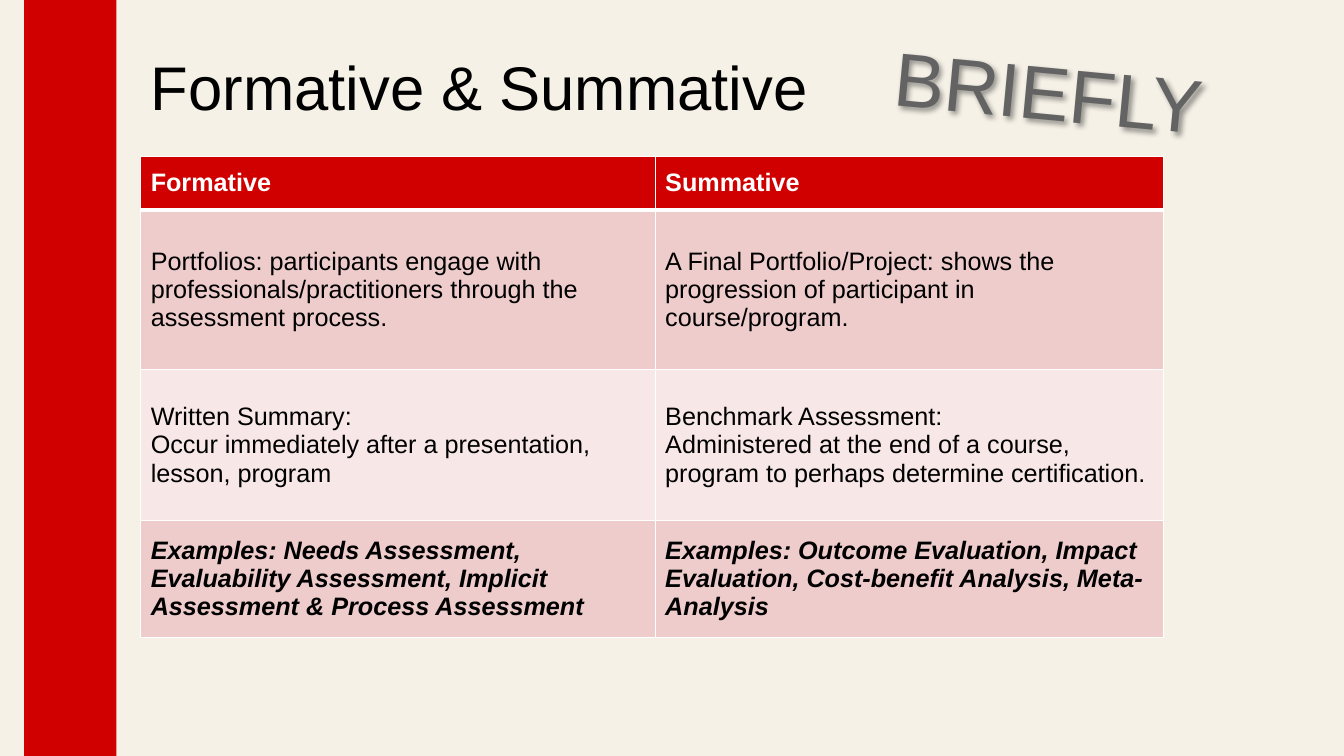
from lxml import etree
from pptx import Presentation
from pptx.dml.color import RGBColor
from pptx.enum.shapes import MSO_SHAPE
from pptx.enum.text import MSO_ANCHOR, PP_ALIGN
from pptx.oxml import parse_xml
from pptx.oxml.ns import nsdecls
from pptx.util import Pt

EMU_PER_PX = 9525
RECTANGLE = MSO_SHAPE.RECTANGLE
MIDDLE = MSO_ANCHOR.MIDDLE
LEFT, CENTER = PP_ALIGN.LEFT, PP_ALIGN.CENTER
TITLE_ONLY = 5

FONT = "Arial"
CREAM, RED, WHITE, BLACK, GRAY = "F5F1E7", "D00000", "FFFFFF", "000000", "626362"
ROW_FILLS = [RED, "EECCCC", "F7E7E7", "EECCCC"]
COLUMN_WIDTHS = [490, 484]
ROW_HEIGHTS = [51, 152, 144, 111]
ROWS = [
    ("Formative", "Summative"),
    ("Portfolios: participants engage with professionals/practitioners "
     "through the assessment process.",
     "A Final Portfolio/Project: shows the progression of participant in course/program."),
    ("Written Summary:\nOccur immediately after a presentation, lesson, program",
     "Benchmark Assessment:\nAdministered at the end of a course, program to perhaps "
     "determine certification."),
    ("Examples: Needs Assessment, Evaluability Assessment, Implicit Assessment "
     "& Process Assessment",
     "Examples: Outcome Evaluation, Impact Evaluation, Cost-benefit Analysis, Meta-Analysis"),
]


def px(length):
    return length * EMU_PER_PX


def color(hex_string):
    return RGBColor.from_string(hex_string)


def format_text(text_frame, size, text_color, bold=False, italic=False, alignment=LEFT):
    for paragraph in text_frame.paragraphs:
        paragraph.alignment = alignment
        for run in paragraph.runs:
            font = run.font
            font.name, font.size = FONT, Pt(size)
            font.bold, font.italic = bold, italic
            font.color.rgb = color(text_color)


def add_background(slide, left, top, width, height):
    slide.background.fill.solid()
    slide.background.fill.fore_color.rgb = color(CREAM)
    band = slide.shapes.add_shape(RECTANGLE, px(left), px(top), px(width), px(height))
    band.shadow.inherit = False
    band.fill.solid()
    band.fill.fore_color.rgb = color(RED)
    band.line.fill.background()


def add_title(slide, left, top, width, height):
    title = slide.shapes.title
    title.left, title.top, title.width, title.height = map(px, (left, top, width, height))
    text_frame = title.text_frame
    text_frame.text = "Formative & Summative"
    text_frame.vertical_anchor = MIDDLE
    text_frame.paragraphs[0].line_spacing = 0.9
    format_text(text_frame, 44, BLACK)


def set_border(cell, side, points):
    properties = cell._tc.get_or_add_tcPr()
    line = etree.SubElement(properties, properties.tag.replace("tcPr", f"ln{side}"),
                            w=str(Pt(points)))
    line.append(parse_xml(f'<a:solidFill {nsdecls("a")}><a:srgbClr val="{WHITE}"/></a:solidFill>'))


def add_comparison_table(slide, left, top):
    frame = slide.shapes.add_table(len(ROWS), len(COLUMN_WIDTHS), px(left), px(top),
                                   px(sum(COLUMN_WIDTHS)), px(sum(ROW_HEIGHTS)))
    table = frame.table
    for column, width in zip(table.columns, COLUMN_WIDTHS):
        column.width = px(width)
    for row_index, (row, height, texts) in enumerate(zip(table.rows, ROW_HEIGHTS, ROWS)):
        row.height = px(height)
        is_header = row_index == 0
        is_examples = row_index == len(ROWS) - 1
        for cell, text in zip(row.cells, texts):
            cell.text_frame.text = text
            cell.vertical_anchor = MIDDLE
            format_text(cell.text_frame, 18, WHITE if is_header else BLACK,
                        bold=is_header or is_examples, italic=is_examples)
            # The rule under the header is heavier than the others
            for side in "LRTB":
                heavy = (row_index, side) in ((0, "B"), (1, "T"))
                set_border(cell, side, 3 if heavy else 1)
            cell.fill.solid()
            cell.fill.fore_color.rgb = color(ROW_FILLS[row_index])


def add_tilted_word(slide, left, top, width, height):
    box = slide.shapes.add_textbox(px(left), px(top), px(width), px(height))
    box.rotation = 5.5
    box.text_frame.word_wrap = True
    box.text_frame.text = "BRIEFLY"
    format_text(box.text_frame, 54, GRAY, alignment=CENTER)
    # Soft shadow to the lower right
    box._element.spPr.append(parse_xml(
        f'<a:effectLst {nsdecls("a")}><a:outerShdw blurRad="50800" dist="38100" dir="2700000" '
        f'algn="tl" rotWithShape="0"><a:srgbClr val="{BLACK}"><a:alpha val="40000"/></a:srgbClr>'
        '</a:outerShdw></a:effectLst>'))


def main():
    presentation = Presentation()
    presentation.slide_width, presentation.slide_height = px(1280), px(720)
    slide = presentation.slides.add_slide(presentation.slide_layouts[TITLE_ONLY])
    add_background(slide, 23, 0, 88, 720)
    add_title(slide, 134, 38, 1058, 96)
    add_comparison_table(slide, 134, 149)
    add_tilted_word(slide, 811, 38, 376, 97)
    presentation.save("out.pptx")


if __name__ == "__main__":
    main()
